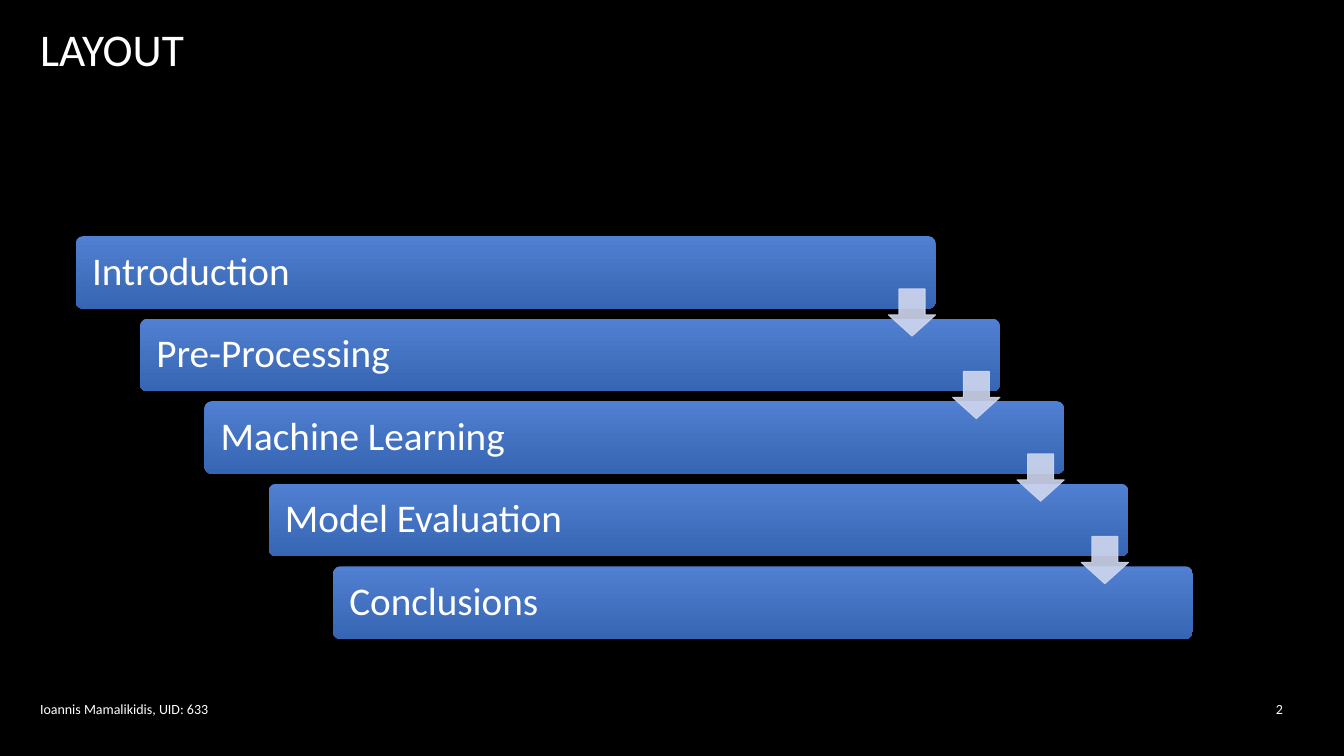
from dataclasses import dataclass

from pptx import Presentation
from pptx import util as u
from pptx.dml.color import RGBColor
from pptx.enum import shapes, text
from pptx.oxml import ns, xmlchemy


@dataclass(frozen=True)
class Theme:
    font: str = "Calibri"
    background: RGBColor = RGBColor(0x00, 0x00, 0x00)
    ink: RGBColor = RGBColor(0xFF, 0xFF, 0xFF)
    bar_top: RGBColor = RGBColor(0x51, 0x80, 0xD2)
    bar_bottom: RGBColor = RGBColor(0x36, 0x65, 0xB3)
    arrow: RGBColor = RGBColor(0xCF, 0xD7, 0xEE)
    title_size: float = 32.4
    step_size: float = 28
    footer_size: float = 10


theme = Theme()


def write(shape, words, size, align=text.PP_ALIGN.LEFT, inset=0.25, line_spacing=None):
    frame = shape.text_frame
    frame.word_wrap = True
    frame.vertical_anchor = text.MSO_ANCHOR.MIDDLE
    frame.margin_left = frame.margin_right = u.Cm(inset)
    paragraph = frame.paragraphs[0]
    paragraph.text = words
    paragraph.alignment = align
    paragraph.line_spacing = line_spacing
    font = paragraph.runs[0].font
    font.name = theme.font
    font.size = u.Pt(size)
    font.color.rgb = theme.ink


deck = Presentation()
deck.slide_width, deck.slide_height = u.Cm(33.87), u.Cm(19.05)
slide = deck.slides.add_slide(deck.slide_layouts[6])
slide.background.fill.solid()
slide.background.fill.fore_color.rgb = theme.background

title = slide.shapes.add_textbox(u.Cm(0.76), u.Cm(0.56), u.Cm(31.83), u.Cm(1.3))
write(title, "LAYOUT", theme.title_size)

# Staircase of steps
steps = ["Introduction", "Pre-Processing", "Machine Learning", "Model Evaluation", "Conclusions"]
first_left, first_top = 1.91, 5.95
shift_right, shift_down = 1.62, 2.08
bar_width, bar_height = 21.67, 1.83
arrow_size, arrow_drop = 1.19, 1.33
corners = [(first_left + i * shift_right, first_top + i * shift_down) for i in range(len(steps))]

for step, (left, top) in zip(steps, corners):
    bar = slide.shapes.add_shape(
        shapes.MSO_SHAPE.ROUNDED_RECTANGLE,
        u.Cm(left), u.Cm(top), u.Cm(bar_width), u.Cm(bar_height))
    bar.adjustments[0] = 0.1
    bar.shadow.inherit = False
    bar.line.fill.background()
    bar.fill.gradient()
    bar.fill.gradient_angle = 270
    for stop, color in zip(bar.fill.gradient_stops, (theme.bar_top, theme.bar_bottom)):
        stop.color.rgb = color
    write(bar, step, theme.step_size, inset=0.36, line_spacing=0.9)

# Arrows lie over the bars, one at the right end of every step but the last
for left, top in corners[:-1]:
    arrow = slide.shapes.add_shape(
        shapes.MSO_SHAPE.DOWN_ARROW,
        u.Cm(left + bar_width - arrow_size), u.Cm(top + arrow_drop),
        u.Cm(arrow_size), u.Cm(arrow_size))
    arrow.adjustments[0] = 0.55
    arrow.adjustments[1] = 0.45
    arrow.shadow.inherit = False
    arrow.line.width = u.Pt(0.75)
    for paint in (arrow.fill, arrow.line.fill):
        paint.solid()
        paint.fore_color.rgb = theme.arrow
    for color in arrow.element.spPr.iter(ns.qn("a:srgbClr")):
        alpha = xmlchemy.OxmlElement("a:alpha")
        alpha.set("val", "90000")
        color.append(alpha)

# Footer
footer_top, footer_height = u.Cm(17.35), u.Cm(1.04)
author = slide.shapes.add_textbox(u.Cm(0.76), footer_top, u.Cm(25.73), footer_height)
write(author, "Ioannis Mamalikidis, UID: 633", theme.footer_size)
page_number = slide.shapes.add_textbox(u.Cm(31.06), footer_top, u.Cm(1.52), footer_height)
write(page_number, "2", theme.footer_size, align=text.PP_ALIGN.RIGHT)

deck.save("out.pptx")
